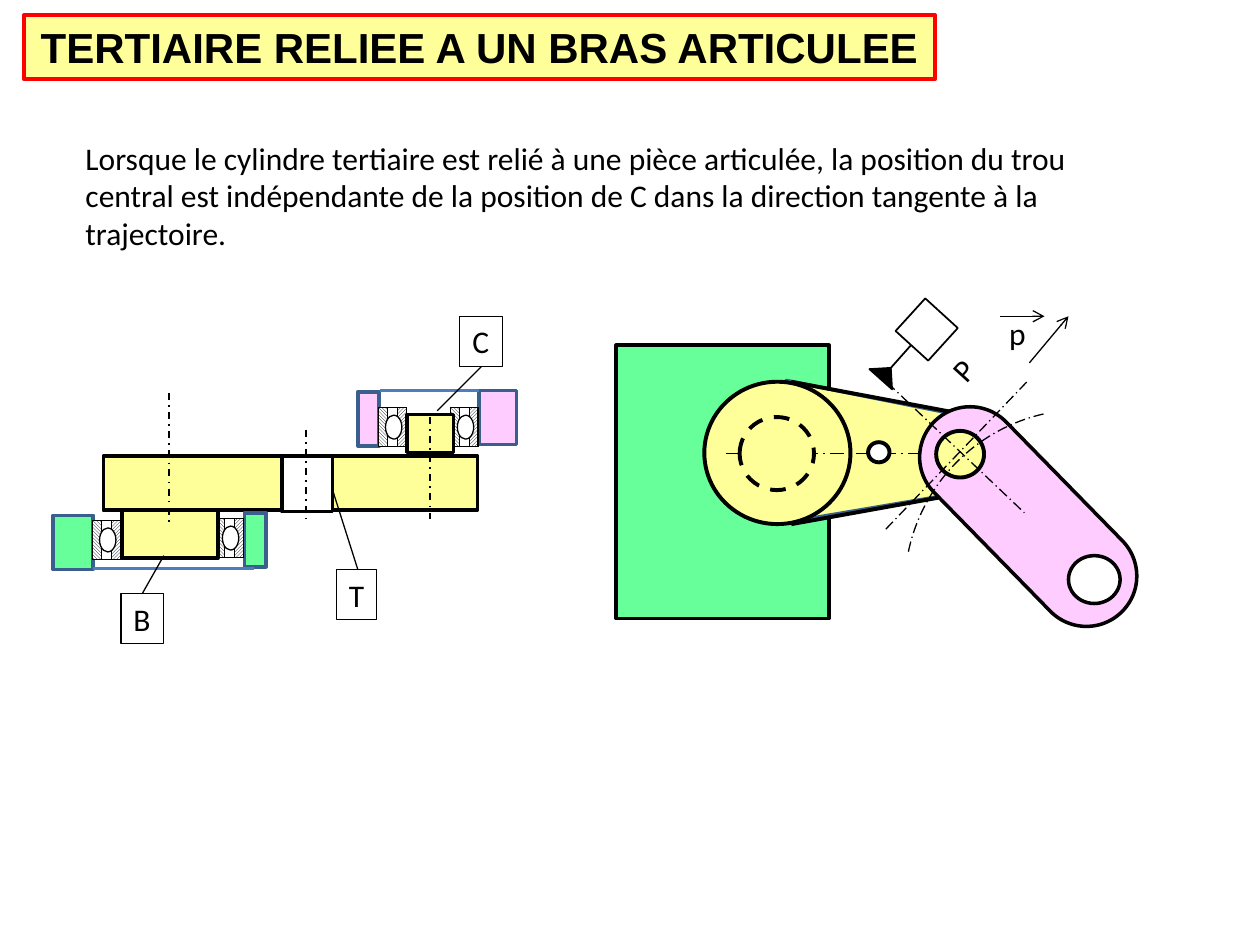
from dataclasses import dataclass
from typing import Optional

from lxml.etree import SubElement
from pptx import Presentation
from pptx.dml.color import RGBColor
from pptx.enum.dml import MSO_LINE as Dash, MSO_PATTERN as Pattern
from pptx.enum.shapes import MSO_CONNECTOR, MSO_SHAPE as Kind
from pptx.enum.text import MSO_ANCHOR, MSO_AUTO_SIZE as AutoSize, PP_ALIGN
from pptx.oxml.ns import qn
from pptx.util import Emu, Inches, Pt

BLACK = RGBColor(0x00, 0x00, 0x00)
WHITE = RGBColor(0xFF, 0xFF, 0xFF)
RED = RGBColor(0xFF, 0x00, 0x00)
GREEN = RGBColor(0x66, 0xFF, 0x99)
YELLOW = RGBColor(0xFF, 0xFF, 0x99)
PINK = RGBColor(0xFF, 0xCC, 0xFF)
NAVY = RGBColor(0x3A, 0x5F, 0x8C)
BLUE = RGBColor(0x4B, 0x7E, 0xBC)

# The slide is a grid of 1000 columns by 750 rows of square cells
COLS, ROWS = 1000, 750
prs = Presentation()
prs.slide_width, prs.slide_height = Inches(10), Inches(7.5)
CELL = prs.slide_width / COLS
s = prs.slides.add_slide(prs.slide_layouts[6])


def cells(n: float) -> Emu:
    return Emu(round(n * CELL))


@dataclass
class Part:
    x: float
    y: float
    w: float
    h: float
    fill: Optional[RGBColor] = None
    color: RGBColor = BLACK
    weight: float = 2
    kind: Kind = Kind.RECTANGLE
    rot: float = 0
    dash: Optional[Dash] = None
    pattern: Optional[Pattern] = None
    adj: tuple = ()


@dataclass
class Line:
    x1: float
    y1: float
    x2: float
    y2: float
    weight: float = 0.75
    color: RGBColor = BLACK
    dash: Optional[Dash] = None
    arrow: bool = False


@dataclass
class Label:
    text: str
    box: Part
    leader: Line


def paint(sp, fill: Optional[RGBColor], color: RGBColor, weight: float) -> None:
    sp.shadow.inherit = False
    if fill is None:
        sp.fill.background()
    else:
        sp.fill.solid()
        sp.fill.fore_color.rgb = fill
    sp.line.color.rgb = color
    sp.line.width = Pt(weight)


def draw_part(part: Part):
    sp = s.shapes.add_shape(part.kind, *map(cells, (part.x, part.y, part.w, part.h)))
    paint(sp, part.fill, part.color, part.weight)
    sp.rotation = part.rot
    for i, value in enumerate(part.adj):
        sp.adjustments[i] = value
    if part.dash:
        sp.line.dash_style = part.dash
    if part.pattern:
        sp.fill.patterned()
        sp.fill.pattern = part.pattern
        sp.fill.fore_color.rgb, sp.fill.back_color.rgb = BLACK, WHITE
    return sp


def draw_line(line: Line) -> None:
    ends = map(cells, (line.x1, line.y1, line.x2, line.y2))
    cn = s.shapes.add_connector(MSO_CONNECTOR.STRAIGHT, *ends)
    cn.line.color.rgb = line.color
    cn.line.width = Pt(line.weight)
    if line.dash:
        cn.line.dash_style = line.dash
    if line.arrow:
        SubElement(cn.line._get_or_add_ln(), qn("a:tailEnd"), type="arrow")
    SubElement(cn._element.spPr, qn("a:effectLst"))


def draw_all(*items) -> None:
    for item in items:
        (draw_line if isinstance(item, Line) else draw_part)(item)


def draw_outline(points: list, fill: RGBColor, color: RGBColor, weight: float) -> None:
    fb = s.shapes.build_freeform(*points[0], scale=CELL)
    fb.add_line_segments(points[1:], close=True)
    paint(fb.convert_to_shape(), fill, color, weight)


def write(sp, text: str, size: float = 18, font: str = "Calibri", bold: bool = False,
          align: PP_ALIGN = PP_ALIGN.LEFT, wrap: bool = False):
    tf = sp.text_frame
    tf.text = text
    tf.word_wrap = wrap
    tf.auto_size = AutoSize.SHAPE_TO_FIT_TEXT
    tf.vertical_anchor = MSO_ANCHOR.TOP
    p = tf.paragraphs[0]
    p.alignment = align
    f = p.runs[0].font
    f.name, f.size, f.bold, f.color.rgb = font, Pt(size), bold, BLACK
    return tf


def text_box(x: float, y: float, w: float, h: float):
    return s.shapes.add_textbox(*map(cells, (x, y, w, h)))


def circle(x: float, y: float, w: float, h: float, fill: RGBColor, **look) -> Part:
    return Part(x, y, w, h, fill, kind=Kind.OVAL, **look)


def bearing(cx: float, cy: float, rot: float) -> None:
    """Ball between two hatched rings, centred on (cx, cy)."""
    def turned(dx: float, w: float, h: float, **look) -> Part:
        return Part(cx + dx - w / 2, cy - h / 2, w, h, weight=0.75, rot=rot, **look)
    draw_all(turned(0, 31, 22),
             turned(-7.5, 31, 7, pattern=Pattern.LIGHT_DOWNWARD_DIAGONAL),
             turned(7.5, 31, 7, pattern=Pattern.LIGHT_UPWARD_DIAGONAL),
             turned(1, 19, 13, fill=WHITE, kind=Kind.OVAL))


# Frame and title
draw_all(Part(489, 274, 169, 217, GREEN))
title = draw_part(Part(19, 12, 723, 51, YELLOW, RED, 2.25))
write(title, "TERTIAIRE RELIEE A UN BRAS ARTICULEE", 24, "Arial", True, PP_ALIGN.CENTER)

# Top view: yellow arm, then pink articulated arm
draw_outline([(624, 302), (764, 330), (764, 391), (622, 415)], YELLOW, NAVY, 2)
draw_all(
    circle(559, 303, 116, 113, YELLOW, weight=2.25),
    Line(576, 360, 788, 360, 1, dash=Dash.LONG_DASH_DOT),
    Line(628, 303, 761, 328, 2.25),
    Line(628, 416, 767, 391, 2.25),
    circle(689, 351, 17, 16, WHITE, weight=2.25),
    Part(710, 370, 212, 80, PINK, kind=Kind.ROUNDED_RECTANGLE, rot=45.6, adj=(0.5,)),
    circle(743, 342, 38, 37, YELLOW, weight=2.25),
    circle(848, 441, 41, 38, WHITE),
    circle(587, 331, 59, 58, YELLOW, weight=2.25, dash=Dash.DASH),
)

# Section: upper pink housing and its bearings
draw_all(Part(380, 310, 30, 43, PINK, NAVY), Part(284, 311, 17, 43, PINK, NAVY),
         Line(302, 310, 380, 310, 1.5, BLUE))
for cx in (311.5, 368.5):
    bearing(cx, 339, 270)

# Section: yellow bar, pin and central hole
draw_all(Part(82, 362, 297, 43, YELLOW), Part(323, 329, 37, 30, YELLOW),
         Part(224, 362, 40, 44, WHITE))

# Section: lower green housing, its bearings and pin
draw_all(Part(42, 409, 32, 43, GREEN, NAVY), Part(194, 407, 17, 43, GREEN, NAVY),
         Line(74, 451, 202, 451, 1.5, BLUE))
for cx, cy in ((182, 427), (84.5, 428.5)):
    bearing(cx, cy, 90)
draw_all(Part(97, 405, 76, 38, YELLOW))

# Centre lines of the section
for x, top, bottom in ((134, 312, 417), (341, 331, 412), (243, 341, 412)):
    draw_line(Line(x, top, x, bottom, 1, dash=Dash.DASH_DOT))

# Probe P
TILT = 312.3
draw_all(Line(693, 293, 813, 407, dash=Dash.LONG_DASH_DOT),
         Part(718, 244, 35, 35, weight=1, rot=TILT),
         Line(723, 274, 699, 301, 1))
draw_outline([(690, 293), (708, 309), (707, 292)], BLACK, BLACK, 1)
probe = text_box(743, 272, 42, 45)
probe.rotation = TILT
tf = write(probe, "P")
tf.margin_left = tf.margin_right = cells(15)
tf.margin_top = tf.margin_bottom = cells(7)

# Direction p and trajectory
draw_all(Line(703, 420, 817, 301, dash=Dash.LONG_DASH_DOT),
         Line(817, 288, 848, 251, arrow=True))
tf = write(text_box(797, 244, 14, 40), "p", wrap=True)
tf.margin_left, tf.margin_right = cells(4), 0
draw_all(Line(794, 251, 829, 251, arrow=True),
         Part(718, 325, 284, 284, weight=0.75, kind=Kind.ARC,
              dash=Dash.LONG_DASH_DOT, adj=(115.1, 154.44)))

# Explanation
write(text_box(58, 105, 861, 101),
      "Lorsque le cylindre tertiaire est relié à une pièce articulée, la position du trou "
      "central est indépendante de la position de C dans la direction tangente à la "
      "trajectoire.", wrap=True)

# Part labels with leaders
for label in (
    Label("B", Part(96, 471, 34, 40, weight=0.75), Line(130, 441, 113, 471)),
    Label("C", Part(365, 251, 34, 40, weight=0.75), Line(382, 291, 347, 326)),
    Label("T", Part(267, 452, 32, 40, weight=0.75), Line(264, 389, 284, 452)),
):
    write(draw_part(label.box), label.text)
    draw_line(label.leader)

prs.save("out.pptx")
